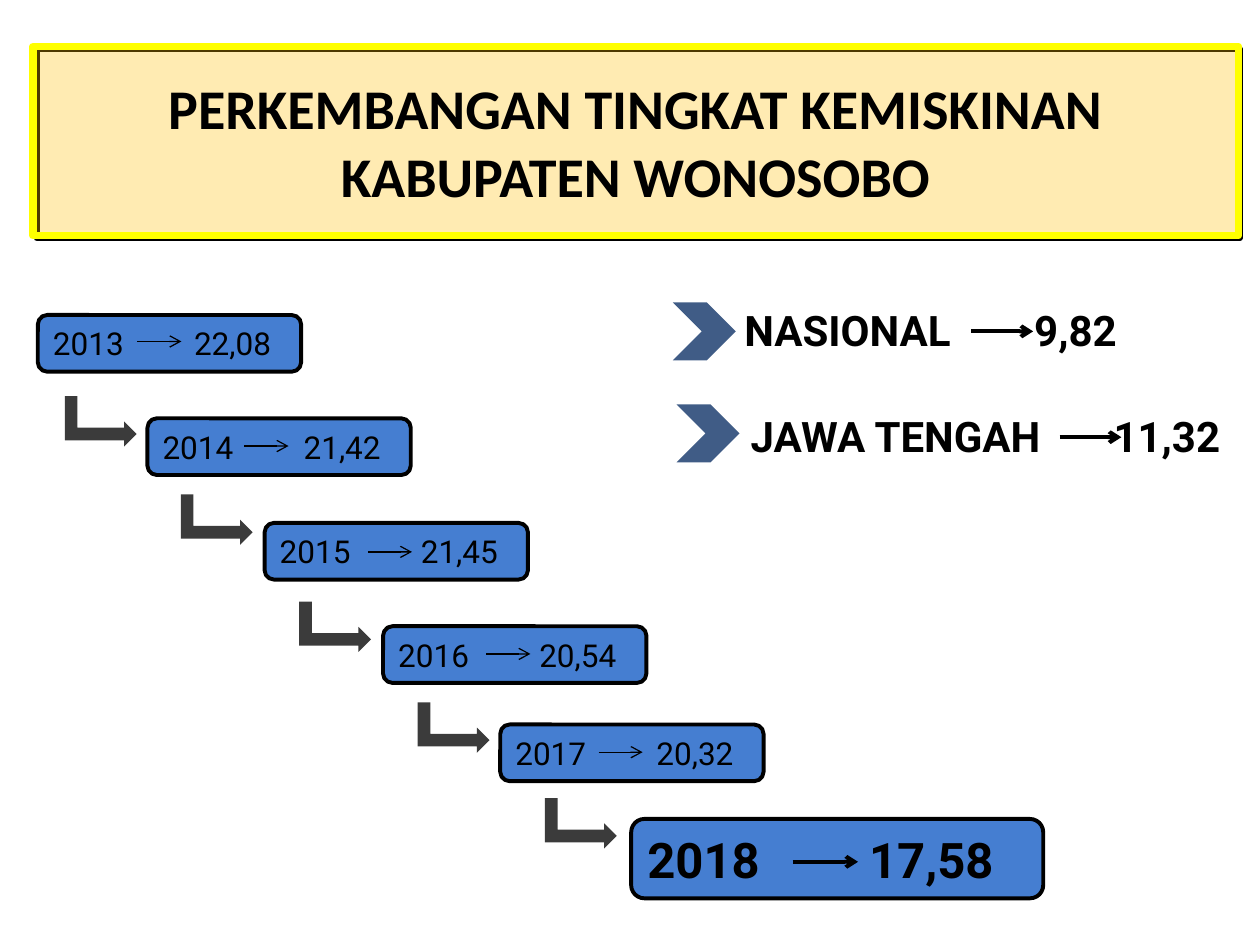
from lxml.etree import SubElement
from pptx import Presentation
from pptx.dml.color import RGBColor
from pptx.enum.shapes import MSO_CONNECTOR as Connector, MSO_SHAPE as Preset
from pptx.enum.text import MSO_ANCHOR as Anchor, MSO_AUTO_SIZE as AutoSize, PP_ALIGN as Align
from pptx.oxml.ns import qn
from pptx.util import Inches, Pt

BLACK = RGBColor(0x00, 0x00, 0x00)
AMBER = RGBColor(0xFF, 0xC0, 0x00)
YELLOW = RGBColor(0xFF, 0xFF, 0x00)
BLUE = RGBColor(0x0E, 0x58, 0xC4)
NAVY = RGBColor(0x07, 0x2C, 0x62)

TITLE = ["PERKEMBANGAN TINGKAT KEMISKINAN", "KABUPATEN WONOSOBO"]

YEARS = [
    {"year": "2013", "rate": "22,08", "place": (0.3, 2.5), "arrow": (1.09, 2.71)},
    {"year": "2014", "rate": "21,42", "place": (1.17, 3.32), "arrow": (1.94, 3.54), "bend": (0.6, 3.06)},
    {"year": "2015", "rate": "21,45", "place": (2.1, 4.15), "arrow": (2.92, 4.38), "bend": (1.52, 3.84)},
    {"year": "2016", "rate": "20,54", "place": (3.04, 4.97), "arrow": (3.86, 5.19), "bend": (2.46, 4.69)},
    {"year": "2017", "rate": "20,32", "place": (3.97, 5.75), "arrow": (4.75, 5.97), "bend": (3.4, 5.49)},
    {"year": "2018", "rate": "17,58", "place": (5.01, 6.5), "arrow": (6.29, 6.84), "bend": (4.41, 6.25)},
]
REGIONS = [
    {"name": "NASIONAL", "rate": "9,82", "place": (5.81, 2.37), "tab": 2.3,
     "arrow": (7.71, 2.63), "chevron": (5.34, 2.4)},
    {"name": "JAWA TENGAH", "rate": "11,32", "place": (5.86, 3.21), "tab": 2.88,
     "arrow": (8.41, 3.47), "chevron": (5.37, 3.21)},
]

PLAIN_STEP = {"size": (2.09, 0.45), "tab": 1.12, "reach": 0.35, "weight": 0.75,
              "font": {"name": "Roboto", "size": Pt(18), "bold": False}}
LAST_STEP = {"size": (3.27, 0.63), "tab": 1.76, "reach": 0.52, "weight": 2.25,
             "font": {"name": "Roboto", "size": Pt(28), "bold": True}}
TITLE_FONT = {"name": "Calibri", "size": Pt(32), "bold": True}
REGION_FONT = {"name": "Roboto", "size": Pt(24), "bold": True}
FRAME = {"word_wrap": True, "auto_size": AutoSize.NONE, "vertical_anchor": Anchor.MIDDLE}


def apply(target, values):
    for name, value in values.items():
        setattr(target, name, value)


def paint(shape, color, opacity):
    shape.fill.solid()
    shape.fill.fore_color.rgb = color
    tint = shape.fill._xPr.find(qn("a:solidFill"))[0]
    SubElement(tint, qn("a:alpha"), val=str(opacity * 1000))


def outline(shape, color, weight):
    shape.line.color.rgb = color
    shape.line.width = Pt(weight)


def add_preset(page, preset, place, size):
    shape = page.shapes.add_shape(preset, *map(Inches, place + size))
    shape.shadow.inherit = False
    shape.line.fill.background()
    return shape


def add_arrow(page, start, reach, weight):
    x, y = start
    arrow = page.shapes.add_connector(Connector.STRAIGHT, *map(Inches, (x, y, x + reach, y)))
    outline(arrow, BLACK, weight)
    SubElement(arrow.line._get_or_add_ln(), qn("a:tailEnd"), type="arrow")
    SubElement(arrow._element.spPr, qn("a:effectLst"))


def write(box, lines, align, font, tab=None):
    apply(box.text_frame, FRAME)
    box.text_frame.text = "\n".join(lines)
    for para in box.text_frame.paragraphs:
        para.alignment = align
        if tab:
            stops = SubElement(para._p.get_or_add_pPr(), qn("a:tabLst"))
            SubElement(stops, qn("a:tab"), pos=str(Inches(tab)), algn="l")
        for span in para.runs:
            apply(span.font, font)
            span.font.color.rgb = BLACK


def add_title(page):
    title = page.shapes.title
    apply(title, dict(zip(("left", "top", "width", "height"), map(Inches, (0.26, 0.37, 9.57, 1.5)))))
    paint(title, AMBER, 30)
    outline(title, YELLOW, 4.33)
    write(title, TITLE, Align.CENTER, TITLE_FONT)
    border = add_preset(page, Preset.RECTANGLE, (0.29, 0.39), (9.55, 1.5))
    border.fill.background()
    outline(border, BLACK, 3.5)
    title._element.addprevious(border._element)


def add_step(page, entry, style):
    box = add_preset(page, Preset.ROUNDED_RECTANGLE, entry["place"], style["size"])
    paint(box, BLUE, 77)
    outline(box, BLACK, 2.25)
    write(box, [f"{entry['year']}\t{entry['rate']}"], Align.JUSTIFY, style["font"], style["tab"])
    add_arrow(page, entry["arrow"], style["reach"], style["weight"])
    if "bend" in entry:
        bend = add_preset(page, Preset.BENT_UP_ARROW, entry["bend"], (0.4, 0.57))
        bend.rotation = 90
        paint(bend, BLACK, 77)


def add_region(page, entry):
    chevron = add_preset(page, Preset.CHEVRON, entry["chevron"], (0.5, 0.46))
    paint(chevron, NAVY, 77)
    box = page.shapes.add_textbox(*map(Inches, entry["place"] + (4.1, 0.5)))
    write(box, [f"{entry['name']}\t{entry['rate']}"], Align.JUSTIFY, REGION_FONT, entry["tab"])
    add_arrow(page, entry["arrow"], 0.49, 2.25)


def main():
    deck = Presentation()
    deck.slide_width, deck.slide_height = Inches(10), Inches(7.5)
    page = deck.slides.add_slide(deck.slide_layouts[5])
    add_title(page)
    for entry in YEARS:
        add_step(page, entry, LAST_STEP if entry is YEARS[-1] else PLAIN_STEP)
    for entry in REGIONS:
        add_region(page, entry)
    deck.save("out.pptx")


if __name__ == "__main__":
    main()
